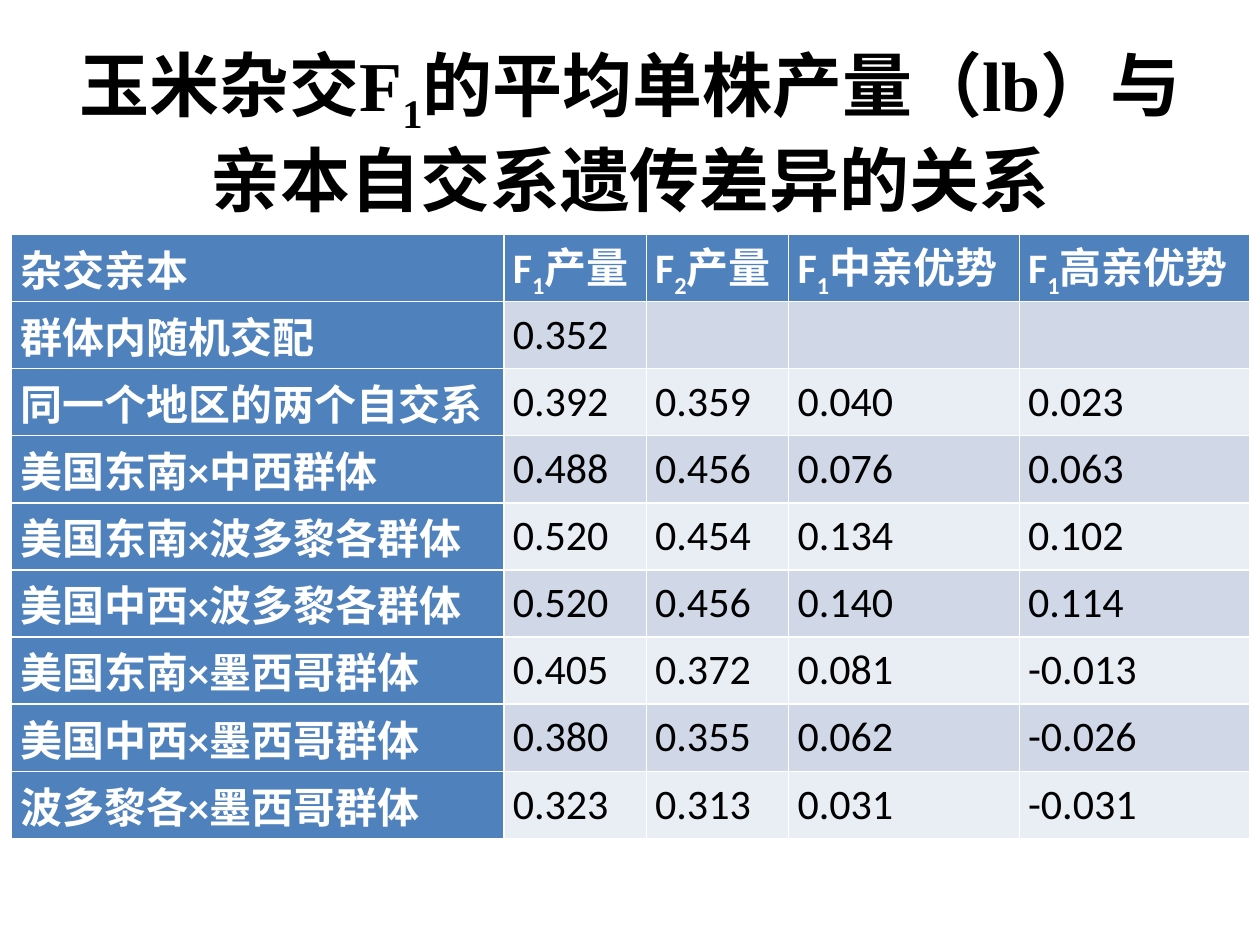
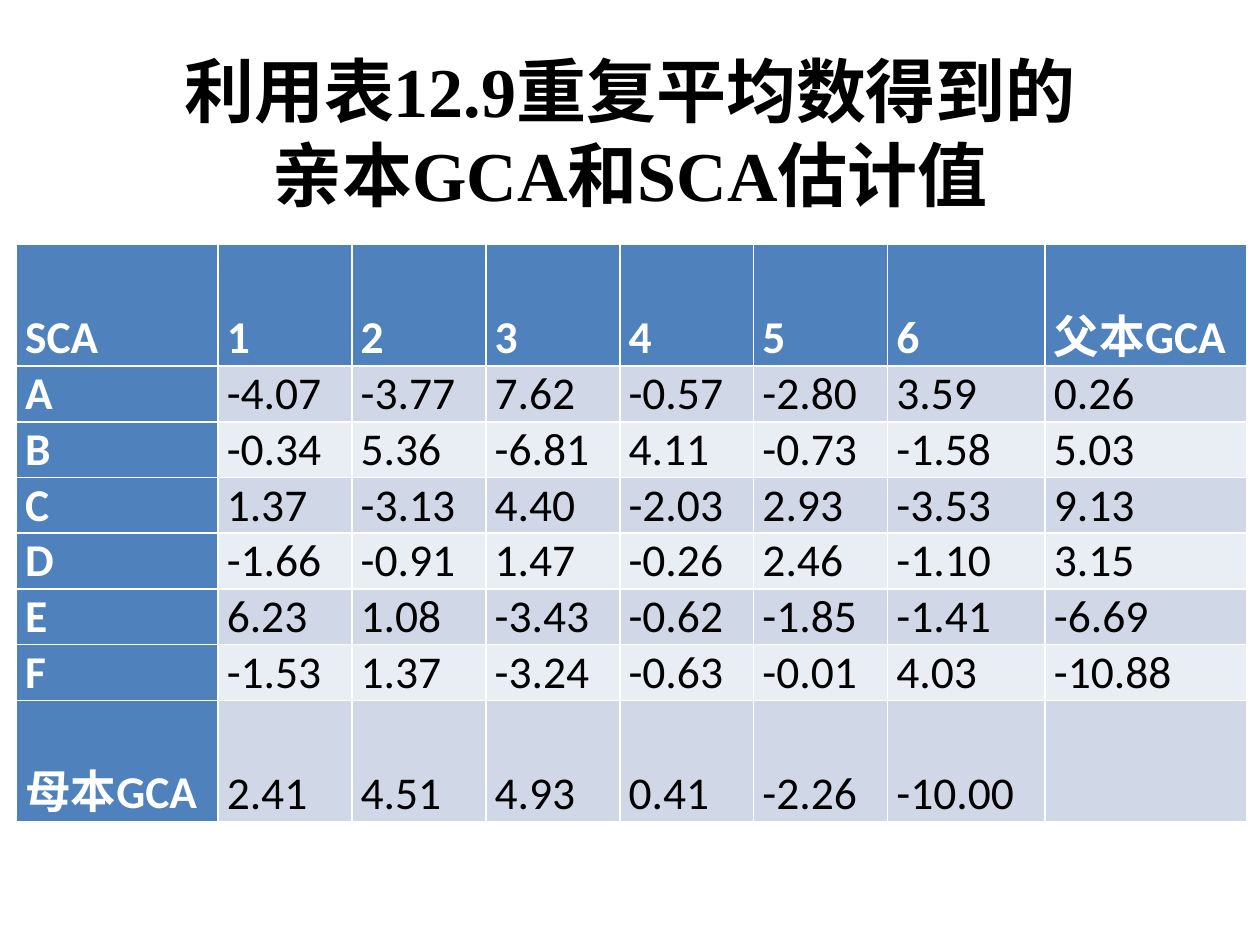
import dataclasses

import pptx
import pptx.dml.color
import pptx.enum.text
import pptx.util

GRID_COLUMNS, GRID_ROWS = 100, 75
ALIGN = pptx.enum.text.PP_ALIGN
ANCHOR = pptx.enum.text.MSO_ANCHOR


@dataclasses.dataclass(frozen=True)
class Theme:
    ink: str = "000000"
    paper: str = "FFFFFF"
    heading: str = "4F81BD"
    bands: tuple = ("D0D8E8", "E9EDF4")
    title_font: str = "Times New Roman"
    table_font: str = "Calibri"
    title_size: int = 40
    cell_margin: float = 0.07


def rgb(colour):
    return pptx.dml.color.RGBColor.from_string(colour)


class Deck:
    """Places elements on the current slide in grid columns and rows."""

    def __init__(self, theme):
        self.theme = theme
        self.presentation = pptx.Presentation()
        self.presentation.slide_width = pptx.util.Inches(10)
        self.presentation.slide_height = pptx.util.Inches(7.5)
        self.slide = None

    def across(self, columns):
        return round(self.presentation.slide_width * columns / GRID_COLUMNS)

    def down(self, rows):
        return round(self.presentation.slide_height * rows / GRID_ROWS)

    def set_text(self, frame, text, font, size, colour, bold, align):
        """Fill the first paragraph; a part between underscores is a subscript."""
        paragraph = frame.paragraphs[0]
        paragraph.alignment = align
        paragraph.font.name = font
        paragraph.font.size = pptx.util.Pt(size)
        paragraph.font.bold = bold
        paragraph.font.color.rgb = rgb(colour)
        for index, part in enumerate(text.split("_")):
            if part:
                run = paragraph.add_run()
                run.text = part
                if index % 2:
                    run._r.get_or_add_rPr().set("baseline", "-25000")

    def add_titled_slide(self, text, width):
        """Start a slide whose title is centred across the page."""
        self.slide = self.presentation.slides.add_slide(self.presentation.slide_layouts[5])
        title = self.slide.shapes.title
        title.left = self.across((GRID_COLUMNS - width) / 2)
        title.top = self.down(3)
        title.width, title.height = self.across(width), self.down(14.8)
        frame = title.text_frame
        frame.word_wrap = True
        frame.auto_size = pptx.enum.text.MSO_AUTO_SIZE.NONE
        frame.vertical_anchor = ANCHOR.MIDDLE
        self.set_text(frame, text, self.theme.title_font, self.theme.title_size,
                      self.theme.ink, True, ALIGN.CENTER)

    def add_banded_table(self, records, left, top, widths, row_height, size, anchor,
                         header_align=ALIGN.LEFT):
        """Add a table with a coloured header row and first column."""
        table = self.slide.shapes.add_table(
            len(records), len(widths), self.across(left), self.down(top),
            self.across(sum(widths)), self.down(row_height * len(records))).table
        table.first_col = True
        for column, width in zip(table.columns, widths):
            column.width = self.across(width)
        for r, record in enumerate(records):
            for c, value in enumerate(record):
                cell = table.cell(r, c)
                is_heading = r == 0 or c == 0
                band = self.theme.bands[(r - 1) % 2]
                cell.fill.solid()
                cell.fill.fore_color.rgb = rgb(self.theme.heading if is_heading else band)
                cell.vertical_anchor = anchor
                cell.margin_left = cell.margin_right = pptx.util.Inches(self.theme.cell_margin)
                cell.margin_top = cell.margin_bottom = 0
                self.set_text(cell.text_frame, value, self.theme.table_font, size,
                              self.theme.paper if is_heading else self.theme.ink,
                              is_heading, ALIGN.LEFT if r else header_align)


YIELDS = [
    ("杂交亲本", "F_1_产量", "F_2_产量", "F_1_中亲优势", "F_1_高亲优势"),
    ("群体内随机交配", "0.352", "", "", ""),
    ("同一个地区的两个自交系", "0.392", "0.359", "0.040", "0.023"),
    ("美国东南×中西群体", "0.488", "0.456", "0.076", "0.063"),
    ("美国东南×波多黎各群体", "0.520", "0.454", "0.134", "0.102"),
    ("美国中西×波多黎各群体", "0.520", "0.456", "0.140", "0.114"),
    ("美国东南×墨西哥群体", "0.405", "0.372", "0.081", "-0.013"),
    ("美国中西×墨西哥群体", "0.380", "0.355", "0.062", "-0.026"),
    ("波多黎各×墨西哥群体", "0.323", "0.313", "0.031", "-0.031"),
]

COMBINING_ABILITIES = [
    ("SCA", "1", "2", "3", "4", "5", "6", "父本GCA"),
    ("A", "-4.07", "-3.77", "7.62", "-0.57", "-2.80", "3.59", "0.26"),
    ("B", "-0.34", "5.36", "-6.81", "4.11", "-0.73", "-1.58", "5.03"),
    ("C", "1.37", "-3.13", "4.40", "-2.03", "2.93", "-3.53", "9.13"),
    ("D", "-1.66", "-0.91", "1.47", "-0.26", "2.46", "-1.10", "3.15"),
    ("E", "6.23", "1.08", "-3.43", "-0.62", "-1.85", "-1.41", "-6.69"),
    ("F", "-1.53", "1.37", "-3.24", "-0.63", "-0.01", "4.03", "-10.88"),
    ("母本GCA", "2.41", "4.51", "4.93", "0.41", "-2.26", "-10.00", ""),
]


def main():
    deck = Deck(Theme())

    deck.add_titled_slide("玉米杂交F_1_的平均单株产量（lb）与亲本自交系遗传差异的关系", width=90)
    deck.add_banded_table(YIELDS, left=0.9, top=18.6, widths=[39.1] + [11.3] * 2 + [18.3] * 2,
                          row_height=5.33, size=24, anchor=ANCHOR.MIDDLE,
                          header_align=ALIGN.JUSTIFY)

    deck.add_titled_slide("利用表12.9重复平均数得到的亲本GCA和SCA估计值", width=74)
    deck.add_banded_table(COMBINING_ABILITIES, left=1.3, top=19.4,
                          widths=[16] + [10.63] * 5 + [12.5, 16],
                          row_height=4.34, size=26, anchor=ANCHOR.BOTTOM)

    deck.presentation.save("out.pptx")


if __name__ == "__main__":
    main()
